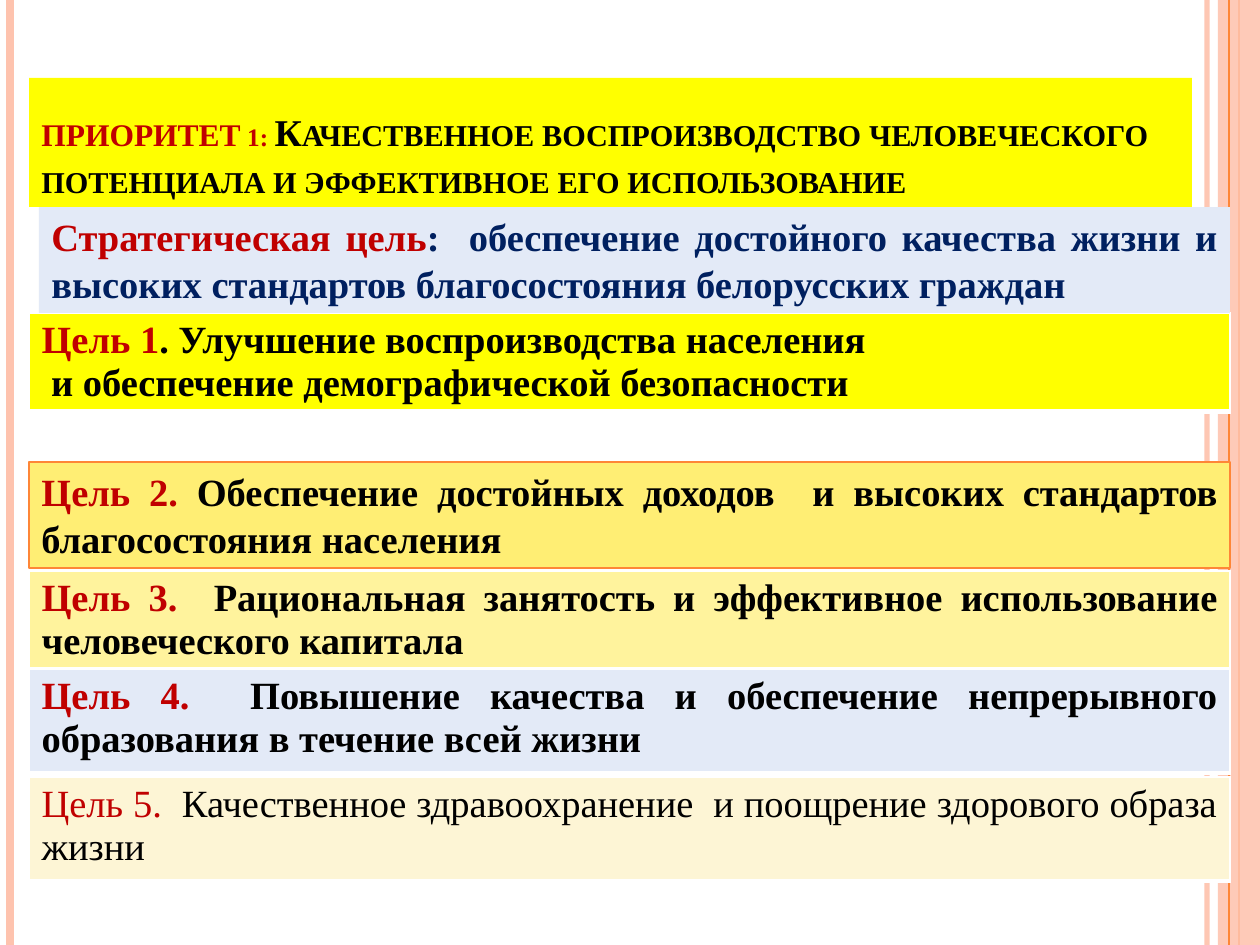
from lxml import etree
from pptx import Presentation
from pptx.dml.color import RGBColor
from pptx.enum.shapes import MSO_CONNECTOR, MSO_SHAPE
from pptx.enum.text import MSO_ANCHOR, PP_ALIGN
from pptx.oxml.ns import qn
from pptx.util import Emu, Pt

LINE, RECT = MSO_CONNECTOR.STRAIGHT, MSO_SHAPE.RECTANGLE
TOP, BASE = MSO_ANCHOR.TOP, MSO_ANCHOR.BOTTOM
LEFT, FULL = PP_ALIGN.LEFT, PP_ALIGN.JUSTIFY
SCALE = 914400 / 126
WIDE, HIGH = 1260, 945


class Theme:
    font = "Times New Roman"
    peach, orange, white = "FEC3AE", "FE8637", "FFFFFF"
    red, navy, black = "C00000", "002060", "000000"
    yellow, gold, lemon = "FFFF00", "FFEE74", "FFF39D"
    blue, cream = "E3EAF7", "FDF5D5"
    small, head, body = 18, 21.6, 22
    loose, tight = 26.5, 24.5


def px(num):
    return Emu(round(num * SCALE))


def rgb(code):
    return RGBColor.from_string(code)


def fade(part, percent):
    """Make the solid colour inside a part see-through."""
    color = next(part.iter(qn("a:srgbClr")))
    etree.SubElement(color, qn("a:alpha")).set("val", str(percent * 1000))


def write(frame, paras, space, align=FULL, bold=True, caps=False):
    """Fill a frame; each paragraph is a list of (text, colour, size)."""
    frame.word_wrap = True
    for i, parts in enumerate(paras):
        para = frame.paragraphs[0] if i == 0 else frame.add_paragraph()
        para.alignment = align
        para.line_spacing = Pt(space)
        for text, color, size in parts:
            run = para.add_run()
            run.text = text
            font = run.font
            font.name, font.size, font.bold = Theme.font, Pt(size), bold
            font.color.rgb = rgb(color)
            if caps:
                run._r.get_or_add_rPr().set("cap", "small")


def block(slide, box, fill, edge=None):
    shape = slide.shapes.add_shape(RECT, *map(px, box))
    shape.shadow.inherit = False
    shape.fill.solid()
    shape.fill.fore_color.rgb = rgb(fill)
    if edge:
        shape.line.color.rgb = rgb(edge)
        shape.line.width = Pt(0.75)
    else:
        shape.line.fill.background()
    return shape


def stripe(slide, x, color, width, alpha=100):
    line = slide.shapes.add_connector(LINE, px(x), 0, px(x), px(HIGH))
    line.line.color.rgb = rgb(color)
    line.line.width = Pt(width)
    if alpha < 100:
        fade(line._element.spPr, alpha)
    etree.SubElement(line._element.spPr, qn("a:effectLst"))


def frame_bars(slide):
    """Stripes along both sides of the slide."""
    stripe(slide, 1207, Theme.peach, 3, 93)
    stripe(slide, 10, Theme.peach, 4.5)
    stripe(slide, 1239, Theme.orange, 1.5)
    band = block(slide, (1218, 0, WIDE - 1218, HIGH), Theme.peach)
    fade(band._element.spPr, 87)
    stripe(slide, 1229, Theme.orange, 0.75)


def panel(slide, box, fill, parts, edge=None, anchor=TOP, **style):
    """Coloured bar with text."""
    frame = block(slide, box, fill, edge).text_frame
    frame.vertical_anchor = anchor
    write(frame, [parts], Theme.loose, **style)


def goal(slide, box, fill, paras, bold=True):
    """Table of one cell with white borders."""
    table = slide.shapes.add_table(1, 1, *map(px, box)).table
    table.first_row = table.horz_banding = False
    cell = table.cell(0, 0)
    write(cell.text_frame, paras, Theme.tight, bold=bold)
    props = cell._tc.get_or_add_tcPr()
    for side, width in (("L", 1), ("R", 1), ("T", 1), ("B", 3)):
        line = etree.SubElement(props, qn("a:ln" + side), w=str(Pt(width)))
        solid = etree.SubElement(line, qn("a:solidFill"))
        etree.SubElement(solid, qn("a:srgbClr"), val=Theme.white)
    cell.fill.solid()
    cell.fill.fore_color.rgb = rgb(fill)


def pair(label, text, color=Theme.black):
    return [(label, Theme.red, Theme.body), (text, color, Theme.body)]


def main():
    deck = Presentation()
    deck.slide_width, deck.slide_height = px(WIDE), px(HIGH)
    slide = deck.slides.add_slide(deck.slide_layouts[6])
    frame_bars(slide)
    left, width = 29, 1201

    # Title
    panel(slide, (left, 78, 1163, 129), Theme.yellow, [
        ("ПРИОРИТЕТ 1: ", Theme.red, Theme.small),
        ("Качественное воспроизводство человеческого потенциала "
         "и эффективное его использование", Theme.black, Theme.head),
    ], anchor=BASE, align=LEFT, caps=True)

    # Goals
    first = [pair("Цель 1", ". Улучшение воспроизводства населения"),
             [(" и обеспечение демографической безопасности",
               Theme.black, Theme.body)]]
    goal(slide, (left, 313, width, 98), Theme.yellow, first)
    panel(slide, (left, 462, width, 106), Theme.gold, pair(
        "Цель 2.", " Обеспечение достойных доходов  и высоких стандартов "
        "благосостояния населения"), edge=Theme.orange)
    goal(slide, (left, 571, width, 98), Theme.lemon, [pair(
        "Цель 3.  ", "Рациональная занятость и эффективное использование "
        "человеческого капитала")])
    goal(slide, (left, 669, width, 104), Theme.blue, [pair(
        "Цель 4.", "  Повышение качества и обеспечение непрерывного "
        "образования в течение всей жизни")])
    goal(slide, (left, 777, width, 104), Theme.cream, [pair(
        "Цель 5.", "  Качественное здравоохранение  и поощрение здорового "
        "образа жизни")], bold=False)

    # Strategic aim
    panel(slide, (39, 207, 1191, 106), Theme.blue, pair(
        "Стратегическая цель", ":  обеспечение достойного качества жизни и "
        "высоких стандартов благосостояния белорусских граждан", Theme.navy))

    deck.save("out.pptx")


if __name__ == "__main__":
    main()
